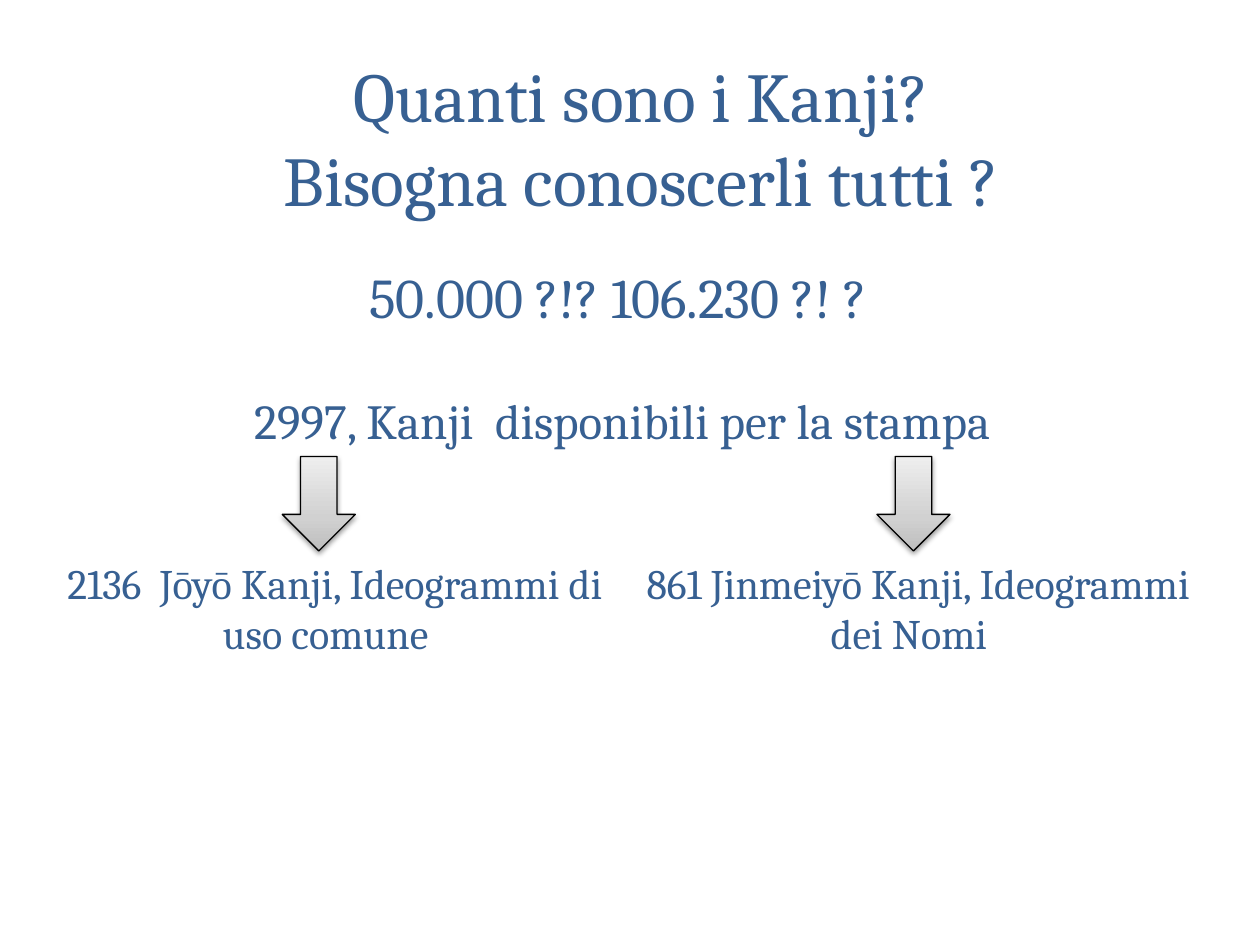
from copy import deepcopy

from lxml.etree import SubElement
from pptx import Presentation
from pptx.dml.color import RGBColor as Color
from pptx.enum.shapes import MSO_SHAPE as Shape
from pptx.enum.text import MSO_ANCHOR as Anchor, PP_ALIGN as Align
from pptx.oxml.ns import qn
from pptx.util import Inches, Pt

COLORS = {
    "text": "376092",
    "space": "000000",
    "outline": "000000",
    "shadow": "000000",
    "arrow bottom": "BDBDBD",
    "arrow middle": "D1D1D1",
    "arrow top": "EEEEEE",
}
FONT = "Cambria"
WIDTH, HEIGHT = Inches(10), Inches(7.5)

presentation = Presentation()
presentation.slide_width, presentation.slide_height = WIDTH, HEIGHT
slide = presentation.slides.add_slide(presentation.slide_layouts[6])


def place(left, top, width, height):
    return [round(share * side) for share, side in
            zip((left, top, width, height), (WIDTH, HEIGHT, WIDTH, HEIGHT))]


def add_text(area, size, runs, anchor=Anchor.TOP):
    frame = slide.shapes.add_textbox(*place(*area)).text_frame
    frame.word_wrap = True
    frame.vertical_anchor = anchor
    paragraph = frame.paragraphs[0]
    paragraph.alignment = Align.CENTER
    for text, color, italic in runs:
        run = paragraph.add_run()
        run.text = text
        run.font.name = FONT
        run.font.size = Pt(size)
        run.font.italic = italic
        run.font.color.rgb = Color.from_string(COLORS[color])
    return paragraph


title = add_text((0.015, 0.061, 1, 0.167), 40,
                 [("Quanti sono i Kanji? ", "text", False)], Anchor.MIDDLE)
title.add_line_break()
second_line = title.add_run()
second_line.text = "Bisogna conoscerli tutti ? "
second_line.font.name = FONT
second_line.font.size = Pt(40)
second_line.font.color.rgb = Color.from_string(COLORS["text"])

add_text((-0.004, 0.271, 1, 0.085), 32, [("50.000 ?!? 106.230 ?! ? ", "text", False)])
add_text((-0.002, 0.407, 1, 0.076), 28,
         [("2997, Kanji  disponibili per la stampa ", "text", False)])

groups = [
    (0.024, 0.224, "2136  Jōyō Kanji, Ideogrammi di uso comune ", True),
    (0.487, 0.696, "861 Jinmeiyō Kanji, Ideogrammi dei Nomi ", False),
]
for text_left, arrow_left, label, italic_space in groups:
    add_text((text_left, 0.583, 0.476, 0.121), 24,
             [(" ", "space", italic_space), (label, "text", False)])

    arrow = slide.shapes.add_shape(Shape.DOWN_ARROW, *place(arrow_left, 0.483, 0.058, 0.1))
    arrow.line.color.rgb = Color.from_string(COLORS["outline"])
    arrow.line.width = Pt(0.75)
    arrow.fill.gradient()
    arrow.fill.gradient_angle = 90
    properties = arrow._element.spPr
    stop_list = properties.find(qn("a:gradFill")).find(qn("a:gsLst"))
    stop_list.insert(1, deepcopy(stop_list[0]))
    stops = [(0, "arrow bottom"), (0.35, "arrow middle"), (1, "arrow top")]
    for stop, (position, color) in zip(arrow.fill.gradient_stops, stops):
        stop.position = position
        stop.color.rgb = Color.from_string(COLORS[color])

    arrow.shadow.inherit = False
    shadow = SubElement(properties.find(qn("a:effectLst")), qn("a:outerShdw"),
                        blurRad=str(Pt(3.1)), dist=str(Pt(1.6)), dir="5400000", rotWithShape="0")
    shadow_color = SubElement(shadow, qn("a:srgbClr"), val=COLORS["shadow"])
    SubElement(shadow_color, qn("a:alpha"), val="38000")

presentation.save("out.pptx")
